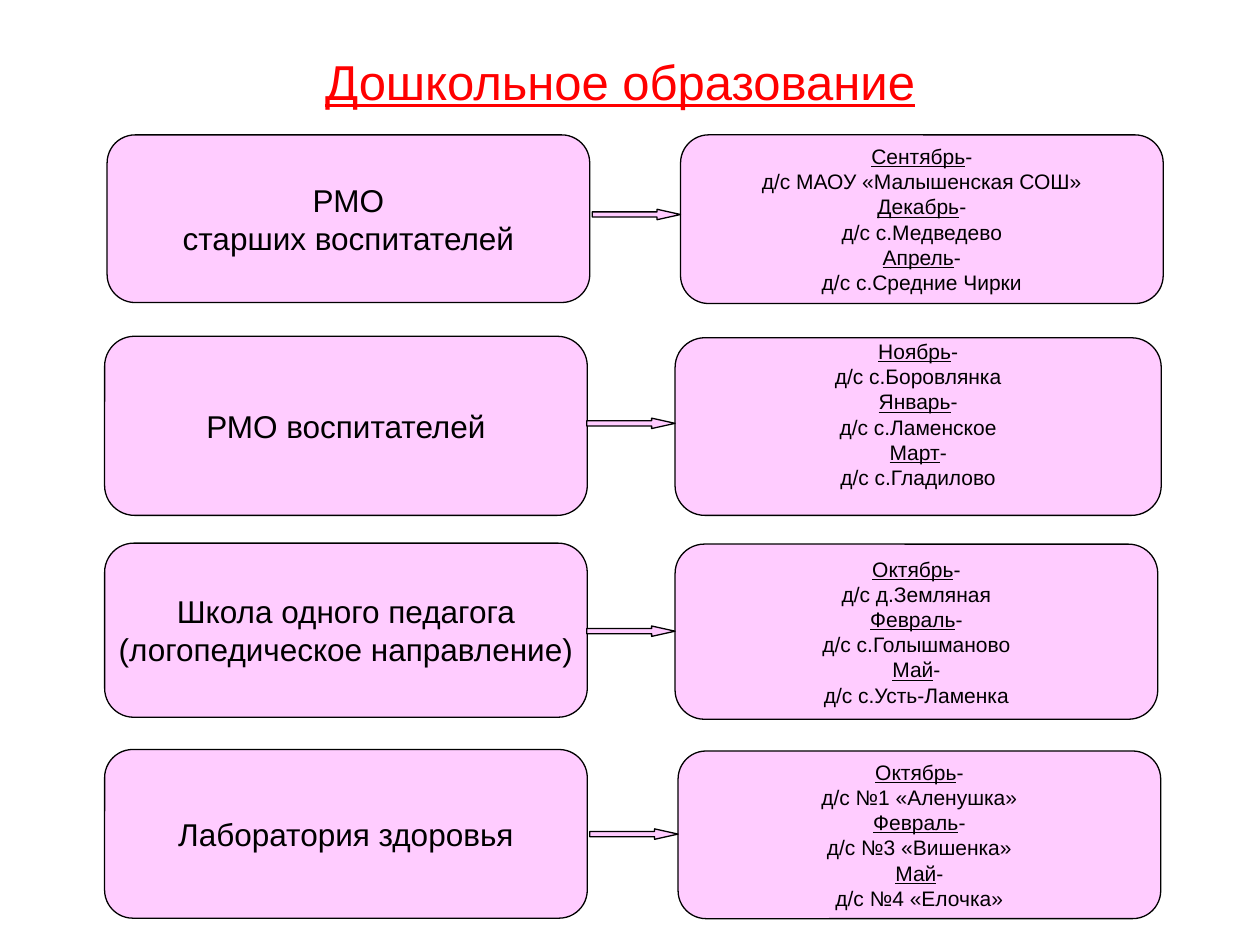
"""Builds the slide on preschool education meetings and where they are held."""
from pptx import Presentation
from pptx.dml.color import RGBColor
from pptx.enum.shapes import MSO_SHAPE as Shape
from pptx.enum.text import MSO_ANCHOR as Anchor, PP_ALIGN as Align
from pptx.util import Cm, Pt

TITLE = "Дошкольное образование"
GROUPS = [
    (["РМО", "старших воспитателей"],
     [("Сентябрь", "д/с МАОУ «Малышенская СОШ»"),
      ("Декабрь", "д/с с.Медведево"),
      ("Апрель", "д/с с.Средние Чирки")]),
    (["РМО воспитателей"],
     [("Ноябрь", "д/с с.Боровлянка"),
      ("Январь", "д/с с.Ламенское"),
      ("Март", "д/с с.Гладилово")]),
    (["Школа одного педагога", "(логопедическое направление)"],
     [("Октябрь", "д/с д.Земляная"),
      ("Февраль", "д/с с.Голышманово"),
      ("Май", "д/с с.Усть-Ламенка")]),
    (["Лаборатория здоровья"],
     [("Октябрь", "д/с №1 «Аленушка»"),
      ("Февраль", "д/с №3 «Вишенка»"),
      ("Май", "д/с №4 «Елочка»")]),
]
PLACES = [
    dict(group=(2.16, 2.72, 9.73, 3.38), schedule=(13.72, 2.72, 9.73, 3.4),
         arrow_top=4.22, raised=0),
    dict(group=(2.11, 6.78, 9.73, 3.61), schedule=(13.61, 6.81, 9.8, 3.58),
         arrow_top=8.43, raised=0.5),
    dict(group=(2.11, 10.95, 9.73, 3.51), schedule=(13.61, 10.97, 9.73, 3.53),
         arrow_top=12.62, raised=0),
    dict(group=(2.11, 15.11, 9.73, 3.4), schedule=(13.67, 15.14, 9.73, 3.38),
         arrow_top=16.71, raised=0),
]
ARROW_WIDTH, ARROW_HEIGHT = 1.78, 0.21
COLORS = {"title": "FF0000", "fill": "FFCCFF", "ink": "000000"}


def color(name):
    return RGBColor.from_string(COLORS[name])


def write(frame, lines, size, ink="ink"):
    for number, line in enumerate(lines):
        paragraph = frame.paragraphs[0] if number == 0 else frame.add_paragraph()
        paragraph.alignment = Align.CENTER
        for words, underlined in line:
            run = paragraph.add_run()
            run.text = words
            run.font.name = "Arial"
            run.font.size = Pt(size)
            run.font.underline = underlined
            run.font.color.rgb = color(ink)


def add_figure(slide, preset, place, adjustments):
    figure = slide.shapes.add_shape(preset, *map(Cm, place))
    for number, value in enumerate(adjustments):
        figure.adjustments[number] = value
    figure.shadow.inherit = False
    figure.fill.solid()
    figure.fill.fore_color.rgb = color("fill")
    figure.line.color.rgb = color("ink")
    figure.line.width = Pt(0.75)
    return figure


def add_card(slide, place, lines, size, raised=0):
    frame = add_figure(slide, Shape.ROUNDED_RECTANGLE, place, [0.167]).text_frame
    frame.word_wrap = False
    frame.vertical_anchor = Anchor.MIDDLE
    frame.margin_top, frame.margin_bottom = 0, Cm(raised)
    write(frame, lines, size)


def main():
    deck = Presentation()
    deck.slide_width, deck.slide_height = Cm(25.4), Cm(19.05)
    slide = deck.slides.add_slide(deck.slide_layouts[6])

    heading = slide.shapes.add_textbox(Cm(1.07), Cm(0.84), Cm(22.86), Cm(1.98)).text_frame
    heading.word_wrap = True
    heading.margin_top = Cm(0.2)
    write(heading, [[(TITLE, True)]], 28, "title")

    for (names, meetings), place in zip(GROUPS, PLACES):
        add_card(slide, place["group"], [[(name, False)] for name in names], 18)
        schedule = []
        for month, venue in meetings:
            schedule += [[(month, True), ("-", False)], [(venue, False)]]
        add_card(slide, place["schedule"], schedule, 12, place["raised"])
        arrow_left = place["schedule"][0] - ARROW_WIDTH
        add_figure(slide, Shape.RIGHT_ARROW,
                   (arrow_left, place["arrow_top"], ARROW_WIDTH, ARROW_HEIGHT),
                   [0.5, 2.25])

    deck.save("out.pptx")


if __name__ == "__main__":
    main()
